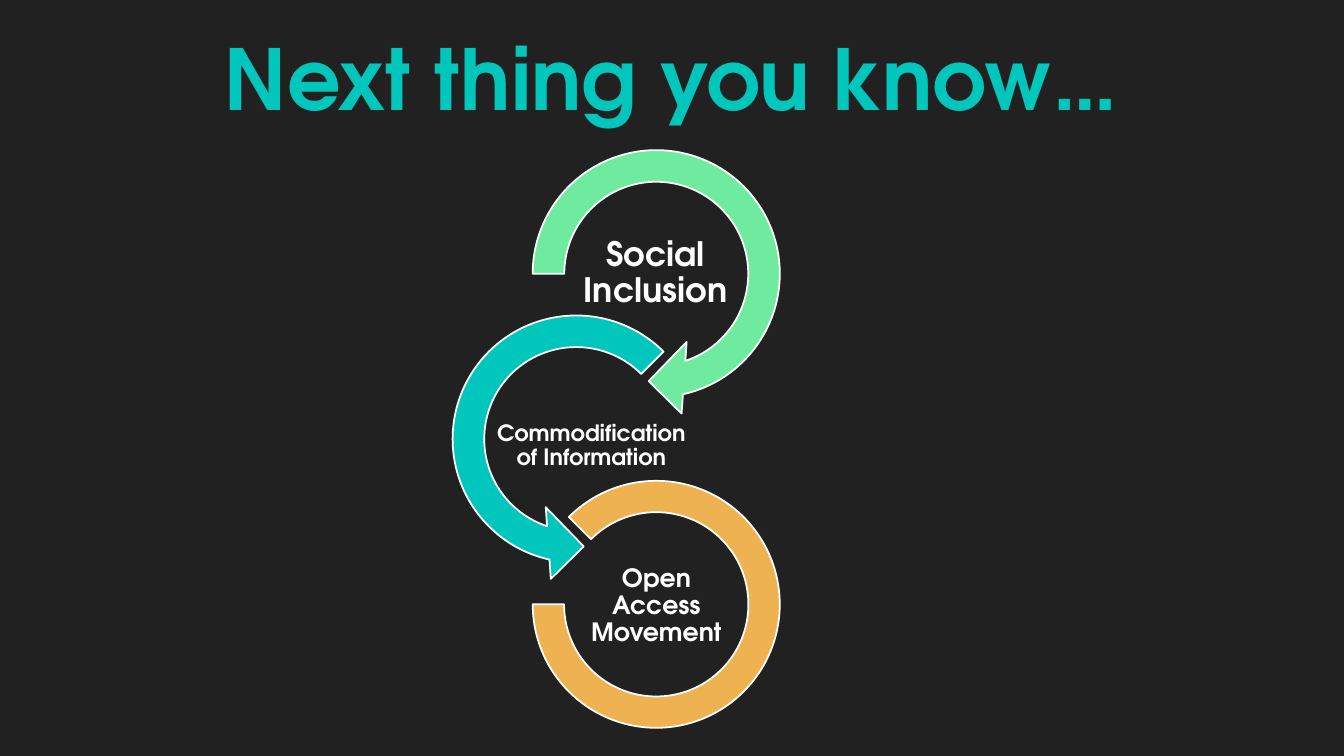
from dataclasses import dataclass

from pptx import Presentation
from pptx.dml.color import RGBColor
from pptx.enum.shapes import MSO_SHAPE
from pptx.enum.text import MSO_ANCHOR, PP_ALIGN
from pptx.util import Inches, Pt


@dataclass(frozen=True)
class Theme:
    font: str = "TeX Gyre Adventor"
    background: str = "212121"
    white: str = "FFFFFF"
    green: str = "6FEBA0"
    teal: str = "00C6BB"
    orange: str = "EFB251"
    title_size: float = 60
    label_sizes: tuple = (24, 16, 18)
    outline: float = 1.25


THEME = Theme()

# Grid of 100 columns by 100 rows over the slide
SLIDE_W, SLIDE_H = 13.33, 7.5
COL, ROW = SLIDE_W / 100, SLIDE_H / 100

# Ring chain: centres step down evenly and swing between two columns
FIRST_RING_ROW, RING_STEP = 36.2, 21.87
RIGHT_COL, LEFT_COL = 48.83, 42.87
LABEL_ROWS = 10.53

# Preset shapes hold angles in 1/60000 degree, adjustments in 1/100000
DEGREE = 0.6
ARROW_BAND, ARC_BAND, HEAD_WIDTH = 0.11, 0.127, 0.125
HEAD_ANGLE = 19.04 * DEGREE


def centred(col, row, cols, rows):
    """Box of cols by rows around a grid point, as left, top, width, height."""
    return (Inches((col - cols / 2) * COL), Inches((row - rows / 2) * ROW),
            Inches(cols * COL), Inches(rows * ROW))


def arrow_angles(tip, tail):
    return (ARROW_BAND, HEAD_ANGLE, tip * DEGREE, tail * DEGREE, HEAD_WIDTH)


def arc_angles(start, end):
    return (start * DEGREE, end * DEGREE, ARC_BAND)


def add_ring(slide, preset, col, row, rows, adjustments, color):
    sp = slide.shapes.add_shape(
        preset, *centred(col, row, rows * ROW / COL, rows))
    for i, value in enumerate(adjustments):
        sp.adjustments[i] = value
    sp.shadow.inherit = False
    sp.fill.solid()
    sp.fill.fore_color.rgb = RGBColor.from_string(color)
    sp.line.color.rgb = RGBColor.from_string(THEME.white)
    sp.line.width = Pt(THEME.outline)


def add_text(slide, text, box, size, color):
    tf = slide.shapes.add_textbox(*box).text_frame
    tf.word_wrap = True
    p = tf.paragraphs[0]
    p.text = text
    p.alignment = PP_ALIGN.CENTER
    p.font.name = THEME.font
    p.font.size = Pt(size)
    p.font.bold = True
    p.font.color.rgb = RGBColor.from_string(color)
    return tf


def add_label(slide, text, col, row, cols, size):
    tf = add_text(slide, text, centred(col, row, cols, LABEL_ROWS),
                  size, THEME.white)
    tf.vertical_anchor = MSO_ANCHOR.MIDDLE
    tf.margin_left = tf.margin_right = Inches(0.01)
    tf.margin_top = tf.margin_bottom = Inches(0.01)
    tf.paragraphs[0].line_spacing = 0.9


def main():
    prs = Presentation()
    prs.slide_width, prs.slide_height = Inches(SLIDE_W), Inches(SLIDE_H)
    slide = prs.slides.add_slide(prs.slide_layouts[6])
    slide.background.fill.solid()
    slide.background.fill.fore_color.rgb = RGBColor.from_string(THEME.background)

    # Title
    add_text(slide, "Next thing you know…", centred(49.95, 10.07, 94.67, 14.53),
             THEME.title_size, THEME.teal)

    # Rings: preset, column, height in rows, adjustments, colour
    rings = [
        (MSO_SHAPE.CIRCULAR_ARROW, RIGHT_COL, 38, arrow_angles(75, 180), THEME.green),
        (MSO_SHAPE.LEFT_CIRCULAR_ARROW, LEFT_COL, 38, arrow_angles(105, 315), THEME.teal),
        (MSO_SHAPE.BLOCK_ARC, RIGHT_COL, 32.67, arc_angles(225, 180), THEME.orange),
    ]
    # Labels: text, centre column, centre row, width in columns
    labels = [
        ("Social Inclusion", 48.77, 36.2, 11.85),
        ("Commodification of Information", 44, 59, 15.08),
        ("Open Access Movement", 48.84, 80.2, 11.85),
    ]
    for i, (ring, label) in enumerate(zip(rings, labels)):
        preset, col, rows, adjustments, color = ring
        add_ring(slide, preset, col, FIRST_RING_ROW + i * RING_STEP, rows,
                 adjustments, color)
        add_label(slide, *label, THEME.label_sizes[i])

    prs.save("out.pptx")


if __name__ == "__main__":
    main()
